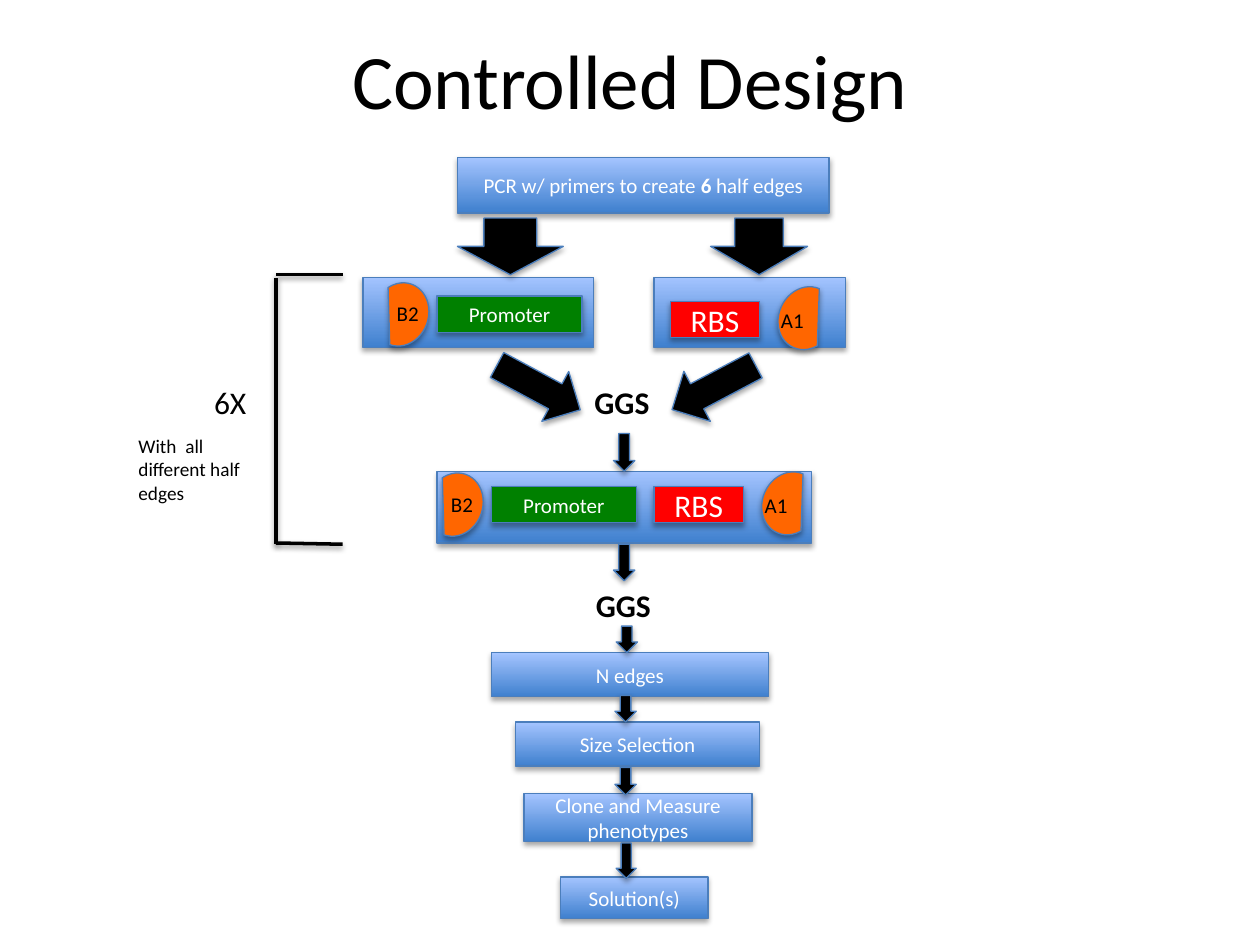
from lxml import etree
from pptx import Presentation
from pptx.dml.color import RGBColor
from pptx.enum.shapes import MSO_CONNECTOR, MSO_SHAPE
from pptx.enum.text import MSO_ANCHOR, PP_ALIGN
from pptx.oxml.ns import qn
from pptx.util import Pt

RECT, CHORD = MSO_SHAPE.RECTANGLE, MSO_SHAPE.CHORD
DOWN, RIGHT = MSO_SHAPE.DOWN_ARROW, MSO_SHAPE.RIGHT_ARROW
LINE = MSO_CONNECTOR.STRAIGHT
MID, TOP = MSO_ANCHOR.MIDDLE, MSO_ANCHOR.TOP
MIDST, LEFT = PP_ALIGN.CENTER, PP_ALIGN.LEFT

HUES = {"deep": "3F80CE", "pale": "A4C4FF", "edge": "4B7EBC", "black": "000000",
        "white": "FFFFFF", "orange": "FF6600", "green": "008000", "red": "FF0000"}
INK = {name: RGBColor.from_string(code) for name, code in HUES.items()}


def write(frame, runs, size, hue, align, anchor):
    for key, val in {"word_wrap": True, "vertical_anchor": anchor}.items():
        setattr(frame, key, val)
    para = frame.paragraphs[0]
    para.alignment = align
    for words, bold in runs:
        run = para.add_run()
        run.text = words
        for key, val in {"name": "Calibri", "size": Pt(size), "bold": bold}.items():
            setattr(run.font, key, val)
        run.font.color.rgb = INK[hue]


def shade(item, alpha, dist):
    props = item._element.spPr
    for old in props.findall(qn("a:effectLst")):
        props.remove(old)
    effects = etree.SubElement(props, qn("a:effectLst"))
    outer = etree.SubElement(effects, qn("a:outerShdw"), blurRad=str(Pt(3.1)),
                             dist=str(Pt(dist)), dir="5400000", rotWithShape="0")
    tint = etree.SubElement(outer, qn("a:srgbClr"), val=HUES["black"])
    etree.SubElement(tint, qn("a:alpha"), val=str(alpha * 1000))


deck = Presentation()
deck.slide_width, deck.slide_height = Pt(720), Pt(540)
slide = deck.slides.add_slide(deck.slide_layouts[5])
shapes = slide.shapes

title = shapes.title
for key, val in {"left": 36, "top": 0, "width": 648, "height": 90}.items():
    setattr(title, key, Pt(val))
write(title.text_frame, [("Controlled Design", False)], 44, "black", MIDST, MID)

parts = []
labels = [
    (332.6, 215.3, 59, 28.8, "GGS", 18, True),
    (333.4, 331.2, 59, 28.8, "GGS", 18, True),
    (115.2, 215.3, 56.9, 28.8, "6X", 18, False),
    (72, 244.8, 85.7, 47.5, "With  all different half edges", 11, False),
]

steps = [
    (261.4, 90, 212.4, 31.7, [("PCR w/ primers to create ", False), ("6", True),
                              (" half edges", False)]),
    (207.4, 158.4, 131.8, 40.3, []),
    (373.7, 158.4, 109.4, 40.3, []),
    (249.8, 269.3, 213.8, 41, []),
    (280.8, 373, 158.4, 25.2, [("N edges", False)]),
    (294.5, 412.6, 139.7, 25.2, [("Size Selection", False)]),
    (299.5, 453.6, 130.3, 27.4, [("Clone and Measure phenotypes", False)]),
    (320.4, 501.1, 84.2, 23.8, [("Solution(s)", False)]),
]
for x, y, w, h, runs in steps:
    parts.append((RECT, x, y, w, h, 0, None, runs, 12))

for x, y in [(213.1, 161.3), (244.1, 270)]:
    parts.append((CHORD, x, y, 31.7, 36.7, 199.9, "orange", [], 12))
    parts.append((RECT, x + 36.7, y + 7.9, 82.8, 20.9, 0, "green",
                  [("Promoter", False)], 12))
    labels.append((x + 6.5, y + 7.2, 41.8, 21.6, "B2", 12, False))

for x, y in [(383, 172.1), (373.7, 277.9)]:
    parts.append((RECT, x, y, 51.1, 20.9, 0, "red", [("RBS", False)], 18))
    parts.append((CHORD, x + 62, y - 8.6, 31.7, 36.7, 23.6, "orange", [], 12))
    labels.append((x + 56.2, y, 33.8, 21.6, "A1", 12, False))

arrows = [
    (DOWN, 261.4, 124.6, 60.5, 32.4, 0),
    (DOWN, 406.1, 124.6, 55.4, 32.4, 0),
    (RIGHT, 280.8, 205.2, 54, 32.4, 28.3),
    (RIGHT, 380.9, 205.2, 54, 32.4, 152.1),
    (DOWN, 350.6, 247.7, 12.2, 21.6, 0),
    (DOWN, 350.6, 311, 12.2, 20.9, 0),
    (DOWN, 352.1, 357.8, 12.2, 15.1, 0),
    (DOWN, 351.4, 397.4, 12.2, 15.1, 0),
    (DOWN, 351.4, 438.5, 12.2, 15.8, 0),
    (DOWN, 352.1, 481.7, 11.5, 20.2, 0),
]
for arrow in arrows:
    parts.append((*arrow, "black", [], 12))

for kind, x, y, w, h, turn, hue, runs, size in parts:
    item = shapes.add_shape(kind, Pt(x), Pt(y), Pt(w), Pt(h))
    item.rotation = turn
    if hue:
        item.fill.solid()
        item.fill.fore_color.rgb = INK[hue]
    else:
        item.fill.gradient()
        item.fill.gradient_angle = 90
        for stop, name in zip(item.fill.gradient_stops, ["deep", "pale"]):
            stop.color.rgb = INK[name]
    item.line.color.rgb = INK["edge"]
    item.line.width = Pt(0.75)
    shade(item, 35, 1.8)
    write(item.text_frame, runs, size, "white", MIDST, MID)

for x, y, w, h, words, size, bold in labels:
    label = shapes.add_textbox(Pt(x), Pt(y), Pt(w), Pt(h))
    write(label.text_frame, [(words, bold)], size, "black", LEFT, TOP)

bracket = [(195.8, 157, 157.7, 157), (157.7, 159.1, 157.7, 311),
           (157.7, 310.3, 195.8, 311)]
for ends in bracket:
    side = shapes.add_connector(LINE, *[Pt(end) for end in ends])
    side.line.color.rgb = INK["black"]
    side.line.width = Pt(2)
    shade(side, 38, 1.6)

deck.save("out.pptx")
